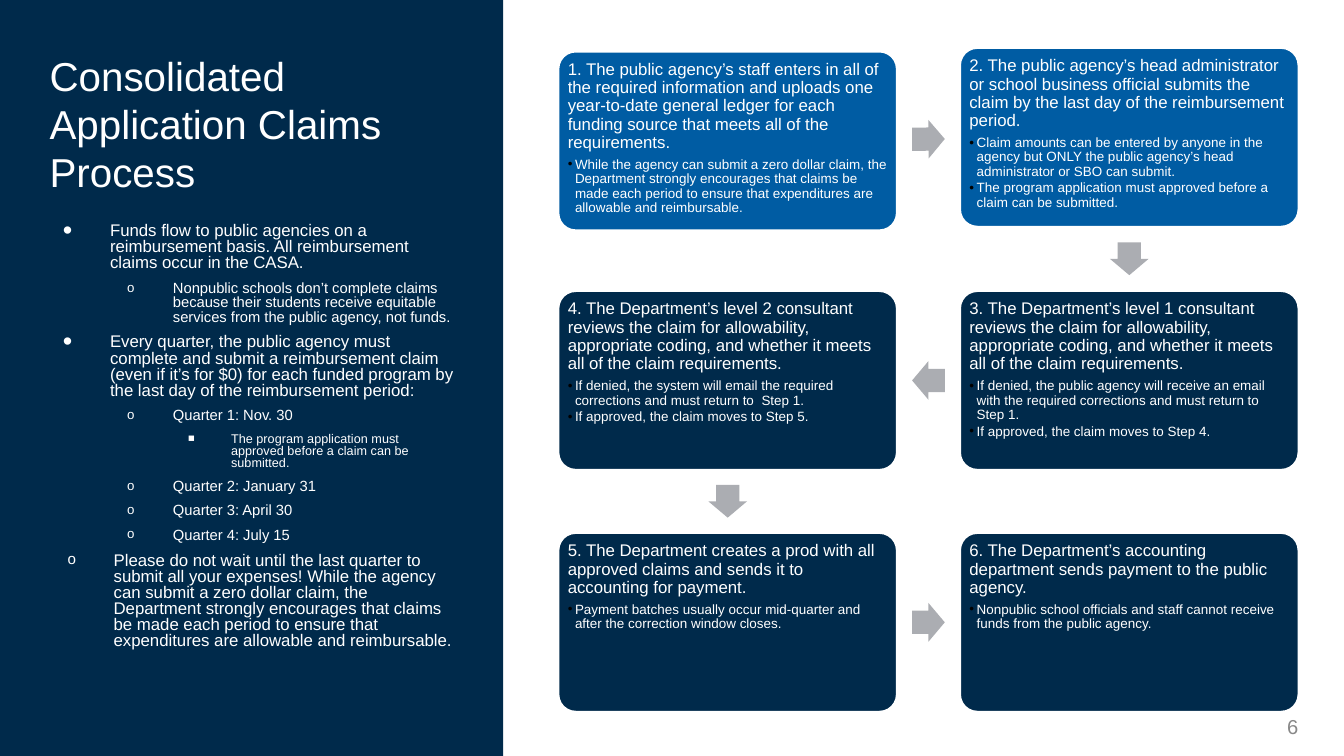
from itertools import pairwise
from math import atan2, degrees

from lxml import etree
from pptx import Presentation
from pptx.dml.color import RGBColor
from pptx.enum.shapes import MSO_SHAPE
from pptx.enum.text import MSO_ANCHOR, MSO_AUTO_SIZE, PP_ALIGN
from pptx.oxml.ns import qn
from pptx.util import Inches, Pt

ROUNDED = MSO_SHAPE.ROUNDED_RECTANGLE
RECTANGLE = MSO_SHAPE.RECTANGLE
ARROW = MSO_SHAPE.RIGHT_ARROW
TOP, MIDDLE = MSO_ANCHOR.TOP, MSO_ANCHOR.MIDDLE
LEFT, RIGHT = PP_ALIGN.LEFT, PP_ALIGN.RIGHT
NO_AUTOFIT = MSO_AUTO_SIZE.NONE

FONT = "Arial"
NAVY, BLUE, GREY, WHITE = "002A4B", "005CA3", "ABADB2", "FFFFFF"
BLACK, NUMBER_GREY = "000000", "888888"

TITLE = "Consolidated Application Claims Process"
PAGE_NUMBER = "6"

STYLES = {
    "main": dict(level=0, size=10, left=0.5, hanging=0.39, bullet="•", scale=161),
    "sub": dict(level=1, size=8.8, left=1.02, hanging=0.38, bullet="o", scale=90),
    "detail": dict(level=2, size=7.5, left=1.5, hanging=0.36, bullet="▪", scale=172),
    "closing": dict(level=0, size=10, left=0.53, hanging=0.38, bullet="o", scale=90),
}
NOTES = [
    ("main", "Funds flow to public agencies on a reimbursement basis. All reimbursement claims occur in the CASA."),
    ("sub", "Nonpublic schools don’t complete claims because their students receive equitable services from the public agency, not funds."),
    ("main", "Every quarter, the public agency must complete and submit a reimbursement claim (even if it’s for $0) for each funded program by the last day of the reimbursement period:"),
    ("sub", "Quarter 1: Nov. 30"),
    ("detail", "The program application must approved before a claim can be submitted."),
    ("sub", "Quarter 2: January 31"),
    ("sub", "Quarter 3: April 30"),
    ("sub", "Quarter 4: July 15"),
    ("closing", "Please do not wait until the last quarter to submit all your expenses! While the agency can submit a zero dollar claim, the Department strongly encourages that claims be made each period to ensure that expenditures are allowable and reimbursable."),
]

STEPS = [
    (0, 0, 0.02, BLUE, "1. The public agency’s staff enters in all of the required information and uploads one year-to-date general ledger for each funding source that meets all of the requirements.",
     ["While the agency can submit a zero dollar claim, the Department strongly encourages that claims be made each period to ensure that expenditures are allowable and reimbursable."]),
    (1, 0, -0.01, BLUE, "2. The public agency’s head administrator or school business official submits the claim by the last day of the reimbursement period.",
     ["Claim amounts can be entered by anyone in the agency but ONLY the public agency’s head administrator or SBO can submit.",
      "The program application must approved before a claim can be submitted."]),
    (1, 1, 0, NAVY, "3. The Department’s level 1 consultant reviews the claim for allowability, appropriate coding, and whether it meets all of the claim requirements.",
     ["If denied, the public agency will receive an email with the required corrections and must return to Step 1.",
      "If approved, the claim moves to Step 4."]),
    (0, 1, 0, NAVY, "4. The Department’s level 2 consultant reviews the claim for allowability, appropriate coding, and whether it meets all of the claim requirements.",
     ["If denied, the system will email the required corrections and must return to  Step 1.",
      "If approved, the claim moves to Step 5."]),
    (0, 2, 0, NAVY, "5. The Department creates a prod with all approved claims and sends it to accounting for payment.",
     ["Payment batches usually occur mid-quarter and after the correction window closes."]),
    (1, 2, 0, NAVY, "6. The Department’s accounting department sends payment to the public agency.",
     ["Nonpublic school officials and staff cannot receive funds from the public agency."]),
]

GRID_LEFT, GRID_TOP = 4.61, 0.4
COLUMN_PITCH, ROW_PITCH = 3.32, 2
BOX_WIDTH, BOX_HEIGHT = 2.81, 1.49
ARROW_LENGTH, ARROW_HEIGHT = 0.27, 0.32


def color(value):
    return RGBColor.from_string(value)


def place(shape, left, top, width, height):
    shape.left, shape.top = Inches(left), Inches(top)
    shape.width, shape.height = Inches(width), Inches(height)


def add_filled(slide, kind, box, fill, line=None):
    shape = slide.shapes.add_shape(kind, *map(Inches, box))
    shape.shadow.inherit = False
    shape.fill.solid()
    shape.fill.fore_color.rgb = color(fill)
    if line:
        shape.line.color.rgb = color(line)
        shape.line.width = Pt(2)
    else:
        shape.line.fill.background()
    return shape


def set_frame(frame, horizontal, vertical, anchor=TOP):
    frame.word_wrap = True
    frame.auto_size = NO_AUTOFIT
    frame.vertical_anchor = anchor
    frame.margin_left = frame.margin_right = Inches(horizontal)
    frame.margin_top = frame.margin_bottom = Inches(vertical)


def write(paragraph, text, size, text_color=WHITE, spacing=1.0, before=0, after=0, align=LEFT):
    paragraph.text = text
    paragraph.alignment = align
    paragraph.line_spacing = spacing
    paragraph.space_before, paragraph.space_after = Pt(before), Pt(after)
    paragraph.font.name = FONT
    paragraph.font.size = Pt(size)
    paragraph.font.color.rgb = color(text_color)


def set_bullet(paragraph, character, left, hanging, bullet_color, scale=100):
    properties = paragraph._p.get_or_add_pPr()
    properties.set("marL", str(Inches(left)))
    properties.set("indent", str(-Inches(hanging)))
    bullet = etree.SubElement(properties, qn("a:buClr"))
    etree.SubElement(bullet, qn("a:srgbClr"), val=bullet_color)
    etree.SubElement(properties, qn("a:buSzPct"), val=str(scale * 1000))
    etree.SubElement(properties, qn("a:buFont"), typeface=FONT)
    etree.SubElement(properties, qn("a:buChar"), char=character)


def next_paragraph(frame, index):
    return frame.add_paragraph() if index else frame.paragraphs[0]


def add_notes(placeholder):
    place(placeholder, 0.31, 1.8, 3.54, 4.09)
    frame = placeholder.text_frame
    set_frame(frame, 0.1, 0.05)
    for index, (name, text) in enumerate(NOTES):
        style = STYLES[name]
        paragraph = next_paragraph(frame, index)
        paragraph.level = style["level"]
        set_bullet(paragraph, style["bullet"], style["left"], style["hanging"], WHITE, style["scale"])
        write(paragraph, text, style["size"], spacing=0.8, before=6)


def add_step(slide, column, row, shift, fill, heading, details):
    left = GRID_LEFT + column * COLUMN_PITCH
    top = GRID_TOP + row * ROW_PITCH + shift
    box = add_filled(slide, ROUNDED, (left, top, BOX_WIDTH, BOX_HEIGHT), fill, WHITE)
    box.adjustments[0] = 0.1
    frame = box.text_frame
    set_frame(frame, 0.04, 0.04)
    write(frame.paragraphs[0], heading, 10, spacing=0.9, after=3.5)
    for detail in details:
        paragraph = frame.add_paragraph()
        paragraph.level = 1
        set_bullet(paragraph, "•", 0.06, 0.06, BLACK)
        write(paragraph, detail, 8, spacing=0.9, after=1.2)
    return left + BOX_WIDTH / 2, top + BOX_HEIGHT / 2


def add_arrow(slide, start, end):
    (x1, y1), (x2, y2) = start, end
    left = (x1 + x2 - ARROW_LENGTH) / 2
    top = (y1 + y2 - ARROW_HEIGHT) / 2
    arrow = add_filled(slide, ARROW, (left, top, ARROW_LENGTH, ARROW_HEIGHT), GREY)
    arrow.adjustments[0], arrow.adjustments[1] = 0.6, 0.5
    arrow.rotation = degrees(atan2(y2 - y1, x2 - x1)) % 360


def main():
    presentation = Presentation()
    presentation.slide_width, presentation.slide_height = Inches(11.11), Inches(6.25)
    slide = presentation.slides.add_slide(presentation.slide_layouts[1])
    title, body = slide.placeholders

    panel = add_filled(slide, RECTANGLE, (0, 0, 4.16, 6.25), NAVY)
    title._element.addprevious(panel._element)

    place(title, 0.31, 0.37, 3.54, 1.43)
    set_frame(title.text_frame, 0.1, 0.05)
    write(title.text_frame.paragraphs[0], TITLE, 24)
    add_notes(body)

    centers = [add_step(slide, *step) for step in STEPS]
    for start, end in pairwise(centers):
        add_arrow(slide, start, end)

    number = slide.shapes.add_textbox(*map(Inches, (10.02, 5.89, 0.81, 0.23)))
    set_frame(number.text_frame, 0.1, 0.05, MIDDLE)
    write(number.text_frame.paragraphs[0], PAGE_NUMBER, 12, NUMBER_GREY, align=RIGHT)

    presentation.save("out.pptx")


if __name__ == "__main__":
    main()
